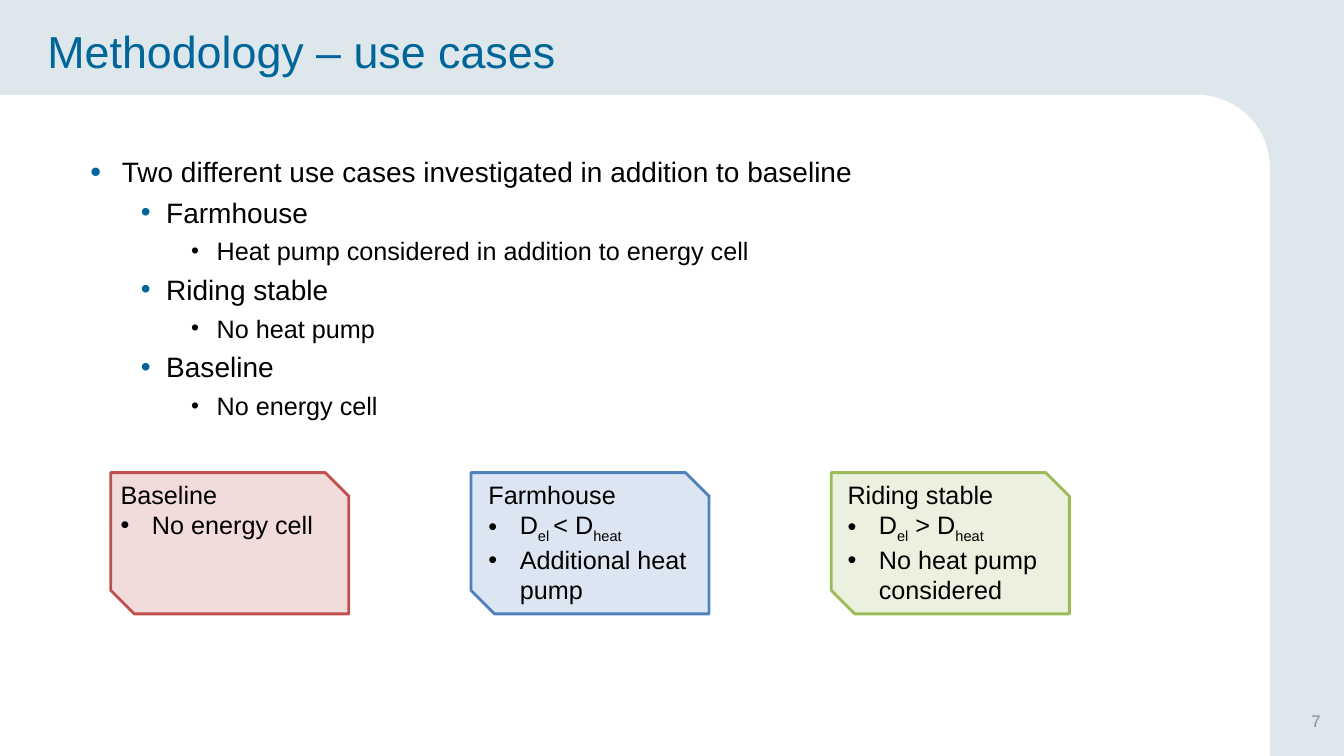
from lxml import etree
from pptx import Presentation
from pptx.dml.color import RGBColor
from pptx.enum.shapes import MSO_SHAPE
from pptx.enum.text import MSO_ANCHOR, PP_ALIGN
from pptx.oxml.ns import qn
from pptx.util import Cm, Pt

PANEL_SHAPE = MSO_SHAPE.ROUND_1_RECTANGLE
CARD_SHAPE = MSO_SHAPE.SNIP_2_DIAG_RECTANGLE
MIDDLE, TOP = MSO_ANCHOR.MIDDLE, MSO_ANCHOR.TOP
LEFT, RIGHT = PP_ALIGN.LEFT, PP_ALIGN.RIGHT

BACKDROP = RGBColor(0xDE, 0xE7, 0xEC)
WHITE = RGBColor(0xFF, 0xFF, 0xFF)
BLACK = RGBColor(0x00, 0x00, 0x00)
PETROL = RGBColor(0x00, 0x66, 0x99)
GRAY = RGBColor(0x8C, 0x8C, 0x8C)
RED, PALE_RED = RGBColor(0xC0, 0x50, 0x4D), RGBColor(0xF2, 0xDC, 0xDB)
BLUE, PALE_BLUE = RGBColor(0x4F, 0x81, 0xBD), RGBColor(0xDC, 0xE6, 0xF2)
GREEN, PALE_GREEN = RGBColor(0x9B, 0xBB, 0x59), RGBColor(0xEB, 0xF1, 0xDE)

# Outline level: margin, hanging indent (cm), bullet size (%), bullet colour, text size
LEVELS = {
    1: (2.06, 0.79, 110, PETROL, 20),
    2: (3.18, 0.64, 100, PETROL, 20),
    3: (4.45, 0.64, 90, BLACK, 18),
}
OUTLINE = [
    (1, "Two different use cases investigated in addition to baseline"),
    (2, "Farmhouse"),
    (3, "Heat pump considered in addition to energy cell"),
    (2, "Riding stable"),
    (3, "No heat pump"),
    (2, "Baseline"),
    (3, "No energy cell"),
]

# Use case: line, fill, text left and width (cm), heading, points as (text, is subscript)
USE_CASES = [
    (RED, PALE_RED, 2.79, 5.38, "Baseline", [[("No energy cell", False)]]),
    (BLUE, PALE_BLUE, 12.06, 5.66, "Farmhouse",
     [[("D", False), ("el ", True), ("< D", False), ("heat", True)],
      [("Additional heat pump", False)]]),
    (GREEN, PALE_GREEN, 21.11, 5.94, "Riding stable",
     [[("D", False), ("el", True), (" > D", False), ("heat", True)],
      [("No heat pump considered", False)]]),
]
CARD_LEFT, CARD_STEP = 2.79, 9.08


class SlideBuilder:
    font_name = "Arial"

    def __init__(self, prs):
        self.slide = prs.slides.add_slide(prs.slide_layouts[5])
        background = self.slide.background.fill
        background.solid()
        background.fore_color.rgb = BACKDROP

    def style(self, paragraph, size, color=BLACK, align=LEFT):
        paragraph.alignment = align
        paragraph.font.name = self.font_name
        paragraph.font.size = Pt(size)
        paragraph.font.color.rgb = color

    def bullet(self, paragraph, margin, hanging, percent=100, color=BLACK):
        props = paragraph._p.get_or_add_pPr()
        props.set("marL", str(Cm(margin)))
        props.set("indent", str(-Cm(hanging)))
        bullet_color = etree.SubElement(props, qn("a:buClr"))
        etree.SubElement(bullet_color, qn("a:srgbClr"), val=str(color))
        etree.SubElement(props, qn("a:buSzPct"), val=str(percent * 1000))
        etree.SubElement(props, qn("a:buFont"), typeface=self.font_name)
        etree.SubElement(props, qn("a:buChar"), char="•")

    def title(self, text, left, top, width, height):
        title = self.slide.shapes.title
        title.left, title.top = Cm(left), Cm(top)
        title.width, title.height = Cm(width), Cm(height)
        title.text_frame.text = text
        title.text_frame.vertical_anchor = MIDDLE
        self.style(title.text_frame.paragraphs[0], 32, PETROL)

    def shape(self, kind, left, top, width, height, fill, line=None):
        shape = self.slide.shapes.add_shape(kind, Cm(left), Cm(top), Cm(width), Cm(height))
        shape.shadow.inherit = False
        shape.fill.solid()
        shape.fill.fore_color.rgb = fill
        if line is None:
            shape.line.fill.background()
        else:
            shape.line.color.rgb = line
            shape.line.width = Pt(2)
        return shape

    def text_box(self, left, top, width, height, anchor=TOP):
        frame = self.slide.shapes.add_textbox(
            Cm(left), Cm(top), Cm(width), Cm(height)).text_frame
        frame.word_wrap = True
        frame.vertical_anchor = anchor
        return frame

    def outline(self, items, left, top, width, height):
        frame = self.text_box(left, top, width, height)
        for i, (level, text) in enumerate(items):
            paragraph = frame.add_paragraph() if i else frame.paragraphs[0]
            margin, hanging, percent, color, size = LEVELS[level]
            paragraph.text = text
            paragraph.level = level - 1
            self.bullet(paragraph, margin, hanging, percent, color)
            if i:
                paragraph.space_before = Pt(4.8)
            self.style(paragraph, size)

    def card_text(self, heading, points, left, top, width, height):
        frame = self.text_box(left, top, width, height)
        frame.text = heading
        self.style(frame.paragraphs[0], 18)
        for point in points:
            paragraph = frame.add_paragraph()
            self.bullet(paragraph, 0.79, 0.79)
            self.style(paragraph, 18)
            for text, is_subscript in point:
                run = paragraph.add_run()
                run.text = text
                if is_subscript:
                    run._r.get_or_add_rPr().set("baseline", "-25000")

    def page_number(self, number, left, top, width, height):
        frame = self.text_box(left, top, width, height, MIDDLE)
        frame.text = number
        self.style(frame.paragraphs[0], 12, GRAY, RIGHT)


def main():
    prs = Presentation()
    prs.slide_width, prs.slide_height = Cm(33.87), Cm(19.05)
    builder = SlideBuilder(prs)

    # White panel with one rounded corner
    panel = builder.shape(PANEL_SHAPE, 0, 2.39, 32, 16.66, WHITE)
    panel.adjustments[0] = 0.11

    # Title, page number and outline
    builder.title("Methodology – use cases", 0.94, 0, 28.93, 2.54)
    builder.page_number("7", 25.63, 17.65, 7.9, 1.02)
    builder.outline(OUTLINE, 0.76, 3.78, 27.23, 10.85)

    # Use case cards
    for i, (line, fill, text_left, text_width, heading, points) in enumerate(USE_CASES):
        builder.shape(CARD_SHAPE, CARD_LEFT + i * CARD_STEP, 11.91, 6, 3.56, fill, line)
        builder.card_text(heading, points, text_left, 11.96, text_width, 3.33)

    prs.save("out.pptx")


if __name__ == "__main__":
    main()
